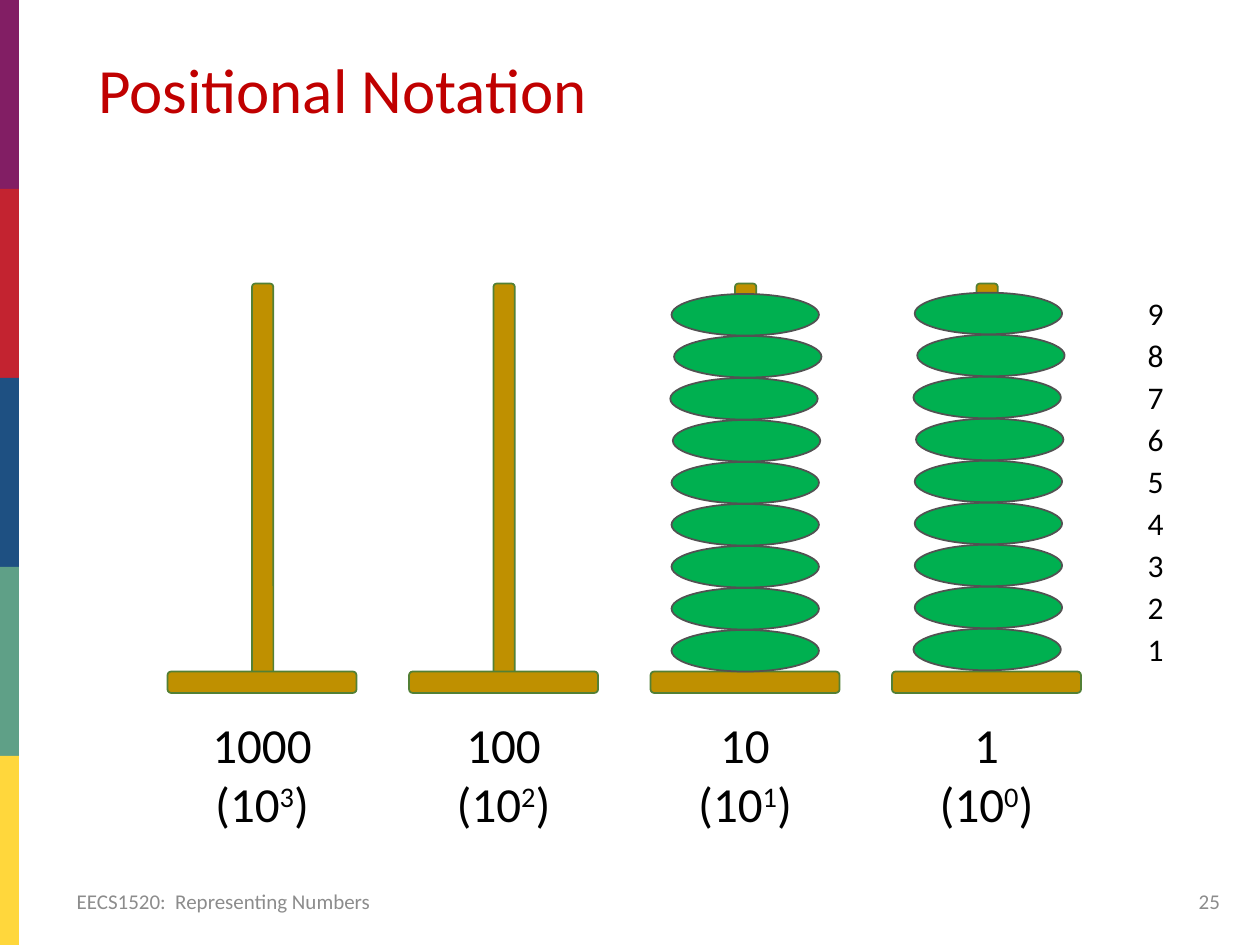
from dataclasses import dataclass

from pptx import Presentation
from pptx.dml.color import RGBColor
from pptx.enum.shapes import MSO_SHAPE
from pptx.enum.text import MSO_ANCHOR, PP_ALIGN
from pptx.util import Inches, Pt


@dataclass(frozen=True)
class Theme:
    font: str = "Calibri"
    title: str = "C00000"
    text: str = "000000"
    muted: str = "8C8C8C"
    wood: str = "BF9000"
    wood_line: str = "538035"
    bead: str = "00B050"
    bead_line: str = "525252"
    stripes: tuple = ("821E64", "C32330", "1E5082", "5FA087", "FFD73C")
    title_size: int = 36
    label_size: int = 28
    scale_size: int = 18
    footer_size: int = 12


class SlideBuilder:
    def __init__(self, slide, theme):
        self.slide = slide
        self.theme = theme

    def shape(self, kind, x, y, w, h, fill, line=None, shapes=None):
        shapes = shapes or self.slide.shapes
        sp = shapes.add_shape(kind, Inches(x), Inches(y), Inches(w), Inches(h))
        sp.shadow.inherit = False
        sp.fill.solid()
        sp.fill.fore_color.rgb = RGBColor.from_string(fill)
        if line:
            sp.line.color.rgb = RGBColor.from_string(line)
            sp.line.width = Pt(1)
        else:
            sp.line.fill.background()
        return sp

    def text(self, x, y, w, h, text, size, color, align=PP_ALIGN.LEFT,
             anchor=MSO_ANCHOR.TOP, spacing=None, wrap=True):
        sp = self.slide.shapes.add_textbox(Inches(x), Inches(y), Inches(w), Inches(h))
        tf = sp.text_frame
        tf.word_wrap = wrap
        tf.vertical_anchor = anchor
        tf.text = text
        for p in tf.paragraphs:
            p.alignment = align
            p.line_spacing = spacing
            for r in p.runs:
                self.format_run(r, size, color)
        return tf

    def format_run(self, r, size, color):
        r.font.name = self.theme.font
        r.font.size = Pt(size)
        r.font.color.rgb = RGBColor.from_string(color)

    def stripes(self):
        for i, color in enumerate(self.theme.stripes):
            self.shape(MSO_SHAPE.RECTANGLE, 0, 1.5 * i, 0.15, 1.5, color)

    def rod(self, x):
        t = self.theme
        group = self.slide.shapes.add_group_shape()
        for box in ((x + 0.67, 2.25, 0.17, 3.17), (x, 5.33, 1.5, 0.17)):
            self.shape(MSO_SHAPE.ROUNDED_RECTANGLE, *box, t.wood, t.wood_line, group.shapes)

    def beads(self, x, bottom, shifts):
        t = self.theme
        for i, shift in enumerate(shifts):
            self.shape(MSO_SHAPE.OVAL, x + shift, bottom - i / 3, 1.17, 0.33,
                       t.bead, t.bead_line)

    def place_label(self, center, exponent):
        t = self.theme
        tf = self.text(center - 0.5, 5.62, 1, 1.04, f"{10 ** exponent}\n(10",
                       t.label_size, t.text, PP_ALIGN.CENTER, wrap=False)
        p = tf.paragraphs[1]
        for part in (str(exponent), ")"):
            r = p.add_run()
            r.text = part
            self.format_run(r, t.label_size, t.text)
        p.runs[1].font._element.set("baseline", "30000")


def main():
    prs = Presentation()
    prs.slide_width, prs.slide_height = Inches(10), Inches(7.5)
    theme = Theme()
    s = SlideBuilder(prs.slides.add_slide(prs.slide_layouts[6]), theme)

    s.stripes()
    s.text(0.68, 0.42, 9.27, 1.01, "Positional Notation",
           theme.title_size, theme.title, spacing=0.9)

    rod_pitch = 5.75 / 3
    for i, exponent in enumerate((3, 2, 1, 0)):
        x = 1.33 + i * rod_pitch
        s.rod(x)
        s.place_label(x + 0.75, exponent)

    upper_shifts = (0.01, -0.01, 0.02, 0)
    s.beads(5.33, 5, (0,) * 5 + upper_shifts)
    s.beads(7.26, 4.99, (-0.01,) + (0,) * 4 + upper_shifts)

    s.text(9.01, 2.25, 0.29, 3.11, "\n".join(str(n) for n in range(9, 0, -1)),
           theme.scale_size, theme.text, spacing=Pt(24))
    s.text(0.51, 6.95, 5.09, 0.4, "EECS1520:  Representing Numbers",
           theme.footer_size, theme.muted, anchor=MSO_ANCHOR.MIDDLE)
    s.text(7.53, 6.95, 2.25, 0.4, "25", theme.footer_size, theme.muted,
           PP_ALIGN.RIGHT, MSO_ANCHOR.MIDDLE)

    prs.save("out.pptx")


if __name__ == "__main__":
    main()
